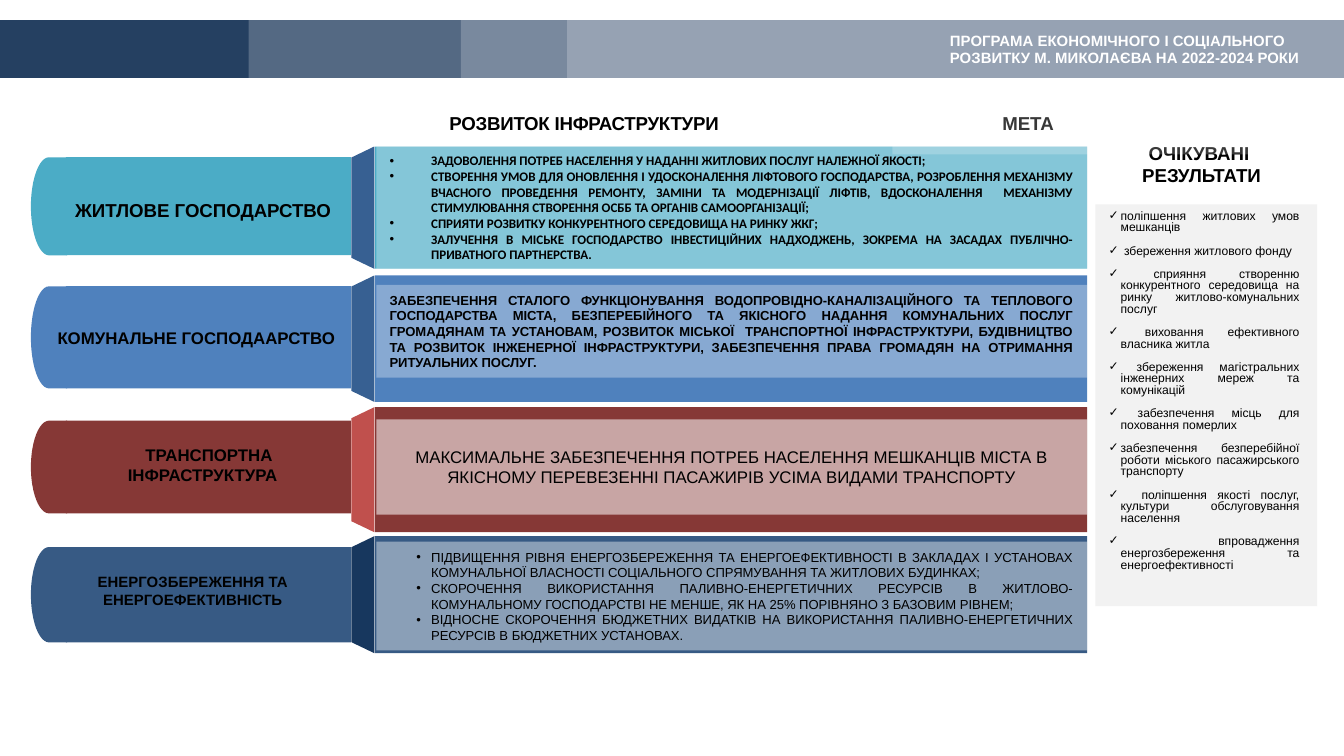
from lxml import etree
from pptx import Presentation
from pptx.dml.color import RGBColor
from pptx.enum.shapes import MSO_SHAPE as Form
from pptx.enum.text import MSO_ANCHOR as Anchor, PP_ALIGN as Align
from pptx.oxml.ns import qn
from pptx.util import Inches, Pt

HUES = {
    "white": "FFFFFF", "black": "000000", "navy": "254061", "pale": "F2F2F2",
    "teal": "4BACC6", "blue": "4F81BD", "steel": "376092", "wine": "863836",
    "red": "C0504D", "slate": "375A84", "ink": "17375E",
}


def rgb(hue):
    return RGBColor.from_string(HUES[hue])


def add_form(slide, box, hue, form=Form.RECTANGLE, alpha=None, turn=0):
    shape = slide.shapes.add_shape(form, *map(Inches, box))
    shape.shadow.inherit = False
    shape.line.fill.background()
    shape.fill.solid()
    shape.fill.fore_color.rgb = rgb(hue)
    shape.rotation = turn
    if alpha is not None:
        tone = shape.fill._xPr.find(".//" + qn("a:srgbClr"))
        etree.SubElement(tone, qn("a:alpha")).set("val", str(alpha * 1000))
    return shape


def set_mark(para, mark, left, hang):
    props = para._p.get_or_add_pPr()
    props.set("marL", str(Inches(left)))
    props.set("indent", str(-Inches(hang)))
    etree.SubElement(props, qn("a:buFont")).set("typeface", "Arial")
    etree.SubElement(props, qn("a:buChar")).set("char", mark)


def write(shape, lines, size, align, bold=True, face="Arial", hue="black",
          mark=None, wrap=True, anchor=Anchor.MIDDLE, lead=None, gap=0, track=0):
    frame = shape.text_frame
    frame.word_wrap = wrap
    frame.vertical_anchor = anchor
    frame.text = "\n".join(lines)
    for para in frame.paragraphs:
        para.alignment = align
        para.space_after = Pt(gap)
        if lead:
            para.line_spacing = lead
        if mark:
            set_mark(para, *mark)
        font = para.font
        font.size, font.bold, font.name = Pt(size), bold, face
        font.color.rgb = rgb(hue)
        if track:
            font._rPr.set("spc", str(track))


def add_text(slide, box, lines, size, align, **style):
    area = slide.shapes.add_textbox(*map(Inches, box))
    write(area, lines, size, align, **style)


def add_row(slide, box, row):
    left, top, width, high = box
    hue, fold = row["hues"]
    # Bar, tag, fold and round cap
    gap, tall = row["tag"]
    add_form(slide, (left + 2.56, top, width - 2.56, high), hue)
    add_form(slide, (left + 0.26, top + gap, 2.12, tall), hue)
    mid = left + 2.47
    fold = add_form(slide, (mid - high / 2, top + high / 2 - 0.085, high, 0.17),
                    fold, Form.TRAPEZOID, turn=270)
    fold.adjustments[0] = 0.48
    add_form(slide, (left, top + gap, 0.27, tall), hue,
             Form.FLOWCHART_DELAY, turn=180)
    # Label and goal
    x, y, w, h = row["spot"]
    add_text(slide, (left + x, top + y, w, h), row["name"], **row["label"])
    drop, deep, alpha = row["veil"]
    veil = add_form(slide, (left + 2.57, top + drop, width - 2.57, deep),
                    "white", alpha=alpha)
    veil.text_frame.margin_right = Inches(0.11)
    write(veil, row["goal"], **row["body"])


def add_side(slide, box, lines):
    left, top, width, _ = box
    add_text(slide, (left + 0.22, top - 0.52, 1.14, 0.44),
             ["ОЧІКУВАНІ ", "РЕЗУЛЬТАТИ"], 10, Align.CENTER, wrap=False)
    panel = add_form(slide, box, "pale")
    panel.text_frame.margin_right = Inches(0.13)
    write(panel, lines, 6.5, Align.JUSTIFY, bold=False, mark=("✓", 0.09, 0.09),
          anchor=Anchor.TOP, lead=0.8, gap=6.2)


def add_head(slide, box):
    left, top, width, high = box
    add_form(slide, box, "navy")
    for x in (1.85, 3.43, 4.22):
        add_form(slide, (left + x, top, width - x, high), "white", alpha=22)
    add_text(slide, (left + 6.97, top + 0.03, 3.06, 0.37),
             ["ПРОГРАМА ЕКОНОМІЧНОГО І СОЦІАЛЬНОГО РОЗВИТКУ М. МИКОЛАЄВА НА 2022-2024 РОКИ"],
             8, Align.LEFT, hue="white")


ROWS = [
    dict(top=1.09, high=0.91, hues=("teal", "steel"), tag=(0.08, 0.73),
         spot=(0.18, 0.34, 2.15, 0.27), name=["ЖИТЛОВЕ ГОСПОДАРСТВО"],
         label=dict(size=10, align=Align.RIGHT, wrap=False),
         veil=(0, 0.91, 32),
         body=dict(size=7, align=Align.JUSTIFY, face="Calibri", mark=("•", 0.31, 0.31)),
         goal=[
             "ЗАДОВОЛЕННЯ ПОТРЕБ НАСЕЛЕННЯ У НАДАННІ ЖИТЛОВИХ ПОСЛУГ НАЛЕЖНОЇ ЯКОСТІ; ",
             "СТВОРЕННЯ УМОВ ДЛЯ ОНОВЛЕННЯ І УДОСКОНАЛЕННЯ ЛІФТОВОГО ГОСПОДАРСТВА, "
             "РОЗРОБЛЕННЯ МЕХАНІЗМУ ВЧАСНОГО ПРОВЕДЕННЯ РЕМОНТУ, ЗАМІНИ ТА МОДЕРНІЗАЦІЇ "
             "ЛІФТІВ, ВДОСКОНАЛЕННЯ  МЕХАНІЗМУ СТИМУЛЮВАННЯ СТВОРЕННЯ ОСББ ТА ОРГАНІВ "
             "САМООРГАНІЗАЦІЇ; ",
             "СПРИЯТИ РОЗВИТКУ КОНКУРЕНТНОГО СЕРЕДОВИЩА НА РИНКУ ЖКГ; ",
             "ЗАЛУЧЕННЯ В МІСЬКЕ ГОСПОДАРСТВО ІНВЕСТИЦІЙНИХ НАДХОДЖЕНЬ, ЗОКРЕМА НА "
             "ЗАСАДАХ ПУБЛІЧНО-ПРИВАТНОГО ПАРТНЕРСТВА."]),
    dict(top=2.05, high=0.94, hues=("blue", "steel"), tag=(0.08, 0.76),
         spot=(0.06, 0.34, 2.3, 0.25), name=["КОМУНАЛЬНЕ ГОСПОДААРСТВО"],
         label=dict(size=9, align=Align.RIGHT, wrap=False),
         veil=(0.07, 0.69, 32), body=dict(size=7, align=Align.JUSTIFY),
         goal=[
             "ЗАБЕЗПЕЧЕННЯ СТАЛОГО ФУНКЦІОНУВАННЯ ВОДОПРОВІДНО-КАНАЛІЗАЦІЙНОГО ТА "
             "ТЕПЛОВОГО ГОСПОДАРСТВА МІСТА, БЕЗПЕРЕБІЙНОГО ТА ЯКІСНОГО НАДАННЯ "
             "КОМУНАЛЬНИХ ПОСЛУГ ГРОМАДЯНАМ ТА УСТАНОВАМ, РОЗВИТОК МІСЬКОЇ  ТРАНСПОРТНОЇ "
             "ІНФРАСТРУКТУРИ, БУДІВНИЦТВО ТА РОЗВИТОК ІНЖЕНЕРНОЇ ІНФРАСТРУКТУРИ, "
             "ЗАБЕЗПЕЧЕННЯ ПРАВА ГРОМАДЯН НА ОТРИМАННЯ РИТУАЛЬНИХ ПОСЛУГ."]),
    dict(top=3.03, high=0.93, hues=("wine", "red"), tag=(0.1, 0.69),
         spot=(0.58, 0.23, 1.35, 0.4), name=["ТРАНСПОРТНА ", "ІНФРАСТРУКТУРА"],
         label=dict(size=9, align=Align.RIGHT, wrap=False),
         veil=(0.09, 0.71, 55), body=dict(size=9, align=Align.CENTER, bold=False),
         goal=[
             "МАКСИМАЛЬНЕ ЗАБЕЗПЕЧЕННЯ ПОТРЕБ НАСЕЛЕННЯ МЕШКАНЦІВ МІСТА В ЯКІСНОМУ "
             "ПЕРЕВЕЗЕННІ ПАСАЖИРІВ УСІМА ВИДАМИ ТРАНСПОРТУ"]),
    dict(top=3.99, high=0.87, hues=("slate", "ink"), tag=(0.08, 0.71),
         spot=(0.38, 0.22, 1.65, 0.37), name=["ЕНЕРГОЗБЕРЕЖЕННЯ ТА ЕНЕРГОЕФЕКТИВНІСТЬ"],
         label=dict(size=8, align=Align.CENTER),
         veil=(0.04, 0.81, 42),
         body=dict(size=7, align=Align.JUSTIFY, bold=False, mark=("•", 0.31, 0.11)),
         goal=[
             "ПІДВИЩЕННЯ РІВНЯ ЕНЕРГОЗБЕРЕЖЕННЯ ТА ЕНЕРГОЕФЕКТИВНОСТІ В ЗАКЛАДАХ І "
             "УСТАНОВАХ КОМУНАЛЬНОЇ ВЛАСНОСТІ СОЦІАЛЬНОГО СПРЯМУВАННЯ ТА ЖИТЛОВИХ БУДИНКАХ;",
             "СКОРОЧЕННЯ ВИКОРИСТАННЯ ПАЛИВНО-ЕНЕРГЕТИЧНИХ РЕСУРСІВ В "
             "ЖИТЛОВО-КОМУНАЛЬНОМУ ГОСПОДАРСТВІ НЕ МЕНШЕ, ЯК НА 25% ПОРІВНЯНО З БАЗОВИМ РІВНЕМ;",
             "ВІДНОСНЕ СКОРОЧЕННЯ БЮДЖЕТНИХ ВИДАТКІВ НА ВИКОРИСТАННЯ "
             "ПАЛИВНО-ЕНЕРГЕТИЧНИХ РЕСУРСІВ В БЮДЖЕТНИХ УСТАНОВАХ."]),
]

RESULTS = [
    "поліпшення житлових умов мешканців ",
    " збереження житлового фонду",
    " сприяння створенню конкурентного середовища на ринку житлово-комунальних послуг",
    " виховання ефективного власника житла",
    " збереження магістральних інженерних мереж та комунікацій",
    " забезпечення місць для поховання померлих ",
    "забезпечення безперебійної роботи міського пасажирського транспорту",
    "  поліпшення якості послуг, культури обслуговування населення",
    " впровадження енергозбереження та енергоефективності ",
]


def main():
    deck = Presentation()
    deck.slide_width = Inches(10)
    deck.slide_height = Inches(10 * 9 / 16)
    slide = deck.slides.add_slide(deck.slide_layouts[6])

    # Column titles
    add_text(slide, (2.9, 0.78, 2.89, 0.27), ["РОЗВИТОК ІНФРАСТРУКТУРИ"],
             10, Align.CENTER, track=-10)
    add_text(slide, (7.36, 0.78, 0.6, 0.27), ["МЕТА"], 10, Align.LEFT, wrap=False)

    # Sectors, results and top strip
    for row in ROWS:
        add_row(slide, (0.23, row["top"], 7.86, row["high"]), row)
    add_side(slide, (8.15, 1.52, 1.65, 2.99), RESULTS)
    add_head(slide, (0, 0.15, 10, 0.43))

    # Light veil over the right titles
    add_form(slide, (6.64, 0.72, 3.35, 0.43), "white", alpha=22)
    deck.save("out.pptx")


if __name__ == "__main__":
    main()
